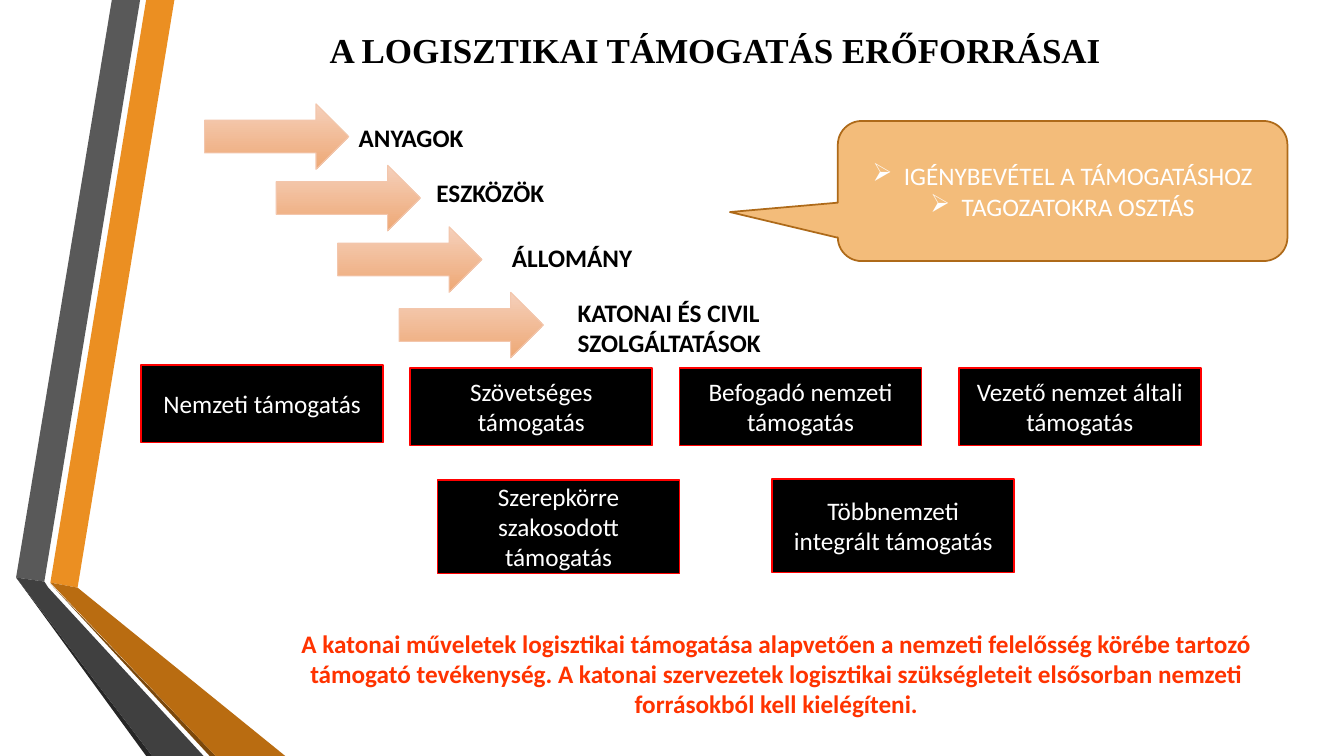
from typing import NamedTuple

from lxml.etree import SubElement
from pptx import Presentation
from pptx.dml.color import RGBColor
from pptx.enum.shapes import MSO_SHAPE as Preset
from pptx.enum.text import MSO_ANCHOR as Anchor, PP_ALIGN as Align
from pptx.oxml.ns import qn
from pptx.shapes.autoshape import Shape
from pptx.util import Pt

PX = 9144  # 100 px to the inch

COLORS = {
    "orange": "EB8F22", "dark orange": "B96C11", "brown": "7B480B",
    "grey": "595959", "dark grey": "404040", "charcoal": "262626",
    "arrow top": "F5D0BB", "arrow bottom": "EEA875", "arrow line": "F3C6AC",
    "callout": "F3BC7A", "callout line": "AE6A19",
    "black": "000000", "white": "FFFFFF", "red": "FF0000", "conclusion": "FF3300",
}


class Area(NamedTuple):
    left: int
    top: int
    width: int
    height: int


class Ribbon(NamedTuple):
    color: str
    points: list[tuple[int, int]]


class Resource(NamedTuple):
    label: str
    arrow_at: tuple[int, int]
    label_area: Area


class Support(NamedTuple):
    name: str
    area: Area


RIBBONS = [
    Ribbon("orange", [(50, 578), (77, 583), (173, 0), (145, 0)]),
    Ribbon("grey", [(139, 0), (111, 0), (16, 573), (44, 577)]),
    Ribbon("charcoal", [(16, 573), (145, 750), (151, 750)]),
    Ribbon("brown", [(50, 579), (208, 750), (214, 750)]),
    Ribbon("dark orange", [(50, 578), (214, 750), (283, 750), (77, 583)]),
    Ribbon("dark grey", [(202, 750), (48, 583), (44, 577), (16, 573), (151, 750)]),
]
RESOURCES = [
    Resource("ANYAGOK", (203, 103), Area(346, 116, 304, 40)),
    Resource("ESZKÖZÖK", (274, 164), Area(423, 171, 233, 40)),
    Resource("ÁLLOMÁNY", (335, 225), Area(498, 235, 314, 40)),
    Resource("KATONAI ÉS CIVIL SZOLGÁLTATÁSOK", (396, 290), Area(563, 290, 303, 71)),
]
SUPPORTS = [
    Support("Nemzeti támogatás", Area(140, 362, 240, 77)),
    Support("Szövetséges támogatás", Area(407, 365, 240, 77)),
    Support("Befogadó nemzeti támogatás", Area(674, 365, 240, 77)),
    Support("Vezető nemzet általi támogatás", Area(951, 365, 240, 77)),
    Support("Szerepkörre szakosodott támogatás", Area(434, 476, 240, 93)),
    Support("Többnemzeti integrált támogatás", Area(766, 475, 240, 93)),
]
CALLOUT = ["IGÉNYBEVÉTEL A TÁMOGATÁSHOZ", "TAGOZATOKRA OSZTÁS"]
CONCLUSION = [
    "A katonai műveletek logisztikai támogatása alapvetően a nemzeti felelősség "
    "körébe tartozó",
    "támogató tevékenység. A katonai szervezetek logisztikai szükségleteit "
    "elsősorban nemzeti forrásokból kell kielégíteni.",
]


def rgb(color: str) -> RGBColor:
    return RGBColor.from_string(COLORS[color])


def emu(area: Area) -> list[int]:
    return [length * PX for length in area]


def write(shape: Shape, lines: list[str], *, color: str = "black", size: int = 18,
          font: str = "Calibri", bold: bool = False, align: Align = Align.LEFT,
          anchor: Anchor = Anchor.TOP, bullet: str = "") -> None:
    frame = shape.text_frame
    frame.word_wrap = True
    frame.vertical_anchor = anchor
    frame.text = "\n".join(lines)
    for paragraph in frame.paragraphs:
        paragraph.alignment = align
        style = paragraph.runs[0].font
        style.name, style.size, style.bold = font, Pt(size), bold
        style.color.rgb = rgb(color)
        if bullet:
            properties = paragraph._p.get_or_add_pPr()
            properties.set("marL", str(31 * PX))
            properties.set("indent", str(-31 * PX))
            SubElement(properties, qn("a:buChar"), char=bullet)


def add_label(shapes, area: Area, lines: list[str], **text_format) -> None:
    write(shapes.add_textbox(*emu(area)), lines, **text_format)


def add_outlined(shapes, preset: Preset, area: Area, line: str, width: float) -> Shape:
    shape = shapes.add_shape(preset, *emu(area))
    shape.shadow.inherit = False
    shape.line.color.rgb = rgb(line)
    shape.line.width = Pt(width)
    return shape


def add_ribbon(shapes, ribbon: Ribbon) -> None:
    start, *rest = ribbon.points
    builder = shapes.build_freeform(*start, scale=PX)
    builder.add_line_segments(rest, close=True)
    shape = builder.convert_to_shape()
    shape.shadow.inherit = False
    shape.fill.solid()
    shape.fill.fore_color.rgb = rgb(ribbon.color)
    shape.line.fill.background()


def add_arrow(shapes, left: int, top: int) -> None:
    arrow = add_outlined(shapes, Preset.RIGHT_ARROW, Area(left, top, 143, 65),
                         "arrow line", 0.75)
    arrow.fill.gradient()
    arrow.fill.gradient_angle = 270
    for stop, color in zip(arrow.fill.gradient_stops, ("arrow top", "arrow bottom")):
        stop.color.rgb = rgb(color)


def add_panel(shapes, preset: Preset, area: Area, fill: str, line: str,
              lines: list[str], bullet: str = "") -> Shape:
    """Add a filled shape with centred white text."""
    panel = add_outlined(shapes, preset, area, line, 1.25)
    panel.fill.solid()
    panel.fill.fore_color.rgb = rgb(fill)
    write(panel, lines, color="white", align=Align.CENTER, anchor=Anchor.MIDDLE,
          bullet=bullet)
    return panel


def main() -> None:
    deck = Presentation()
    deck.slide_width, deck.slide_height = 1333 * PX, 750 * PX
    shapes = deck.slides.add_slide(deck.slide_layouts[6]).shapes

    for ribbon in RIBBONS:
        add_ribbon(shapes, ribbon)
    add_label(shapes, Area(317, 23, 891, 52), ["A LOGISZTIKAI TÁMOGATÁS ERŐFORRÁSAI"],
              size=25, font="Times New Roman", bold=True)
    for resource in RESOURCES:
        add_arrow(shapes, *resource.arrow_at)
        add_label(shapes, resource.label_area, [resource.label], bold=True)
    callout = add_panel(shapes, Preset.ROUNDED_RECTANGULAR_CALLOUT,
                        Area(831, 120, 446, 139), "callout", "callout line",
                        CALLOUT, bullet="➢")
    for index, adjustment in enumerate((-0.74, 0.15, 0.17)):
        callout.adjustments[index] = adjustment
    for support in SUPPORTS:
        add_panel(shapes, Preset.RECTANGLE, support.area, "black", "red", [support.name])
    add_label(shapes, Area(253, 618, 1034, 101), CONCLUSION,
              color="conclusion", bold=True, align=Align.CENTER)

    deck.save("out.pptx")


if __name__ == "__main__":
    main()
